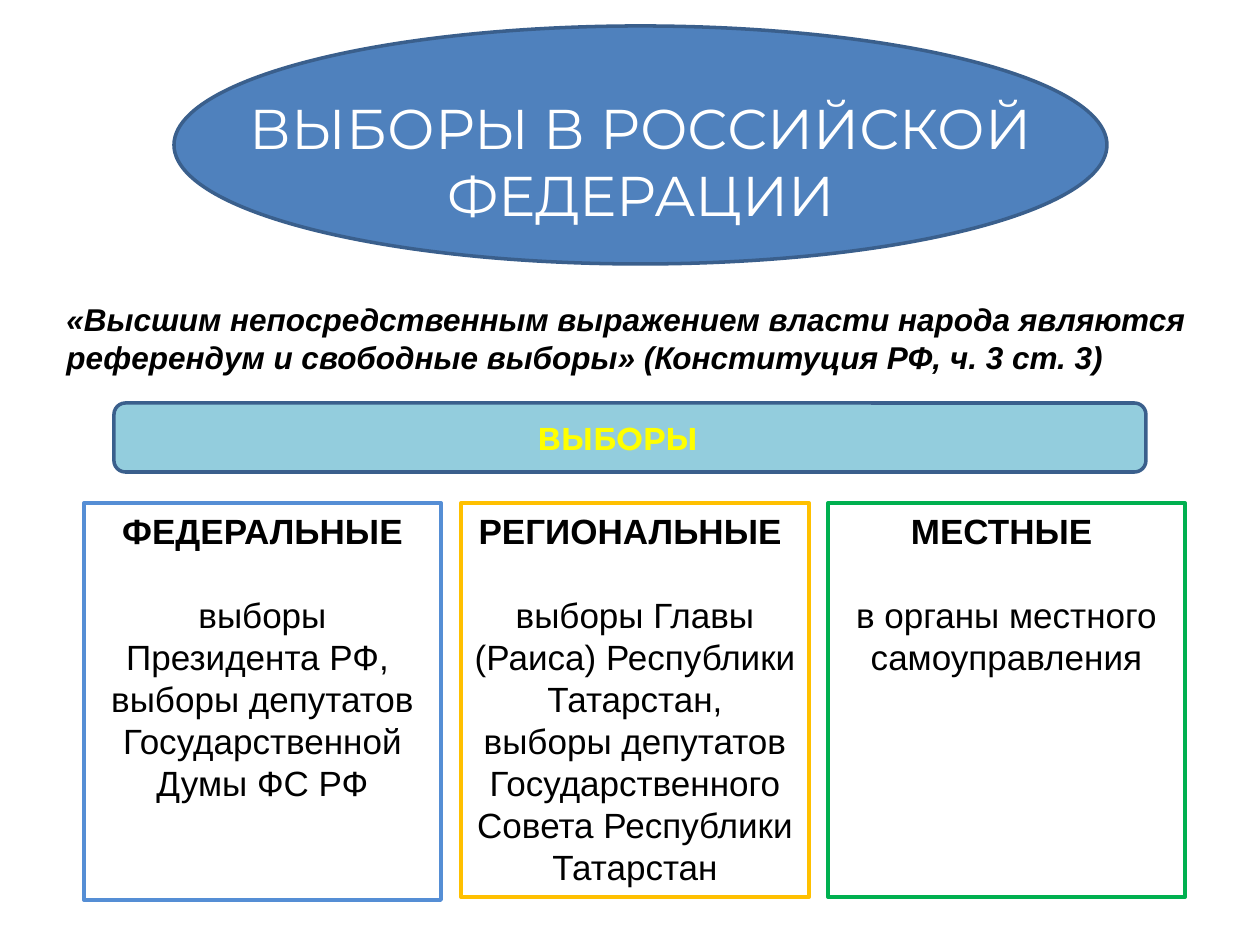
from lxml.etree import SubElement
from pptx import Presentation
from pptx.dml.color import RGBColor
from pptx.enum.shapes import MSO_SHAPE
from pptx.enum.text import MSO_ANCHOR, MSO_AUTO_SIZE, PP_ALIGN
from pptx.oxml.ns import qn
from pptx.util import Emu, Pt

PX = 914400 / 126

BLACK = RGBColor(0x00, 0x00, 0x00)
WHITE = RGBColor(0xFF, 0xFF, 0xFF)
YELLOW = RGBColor(0xFF, 0xFF, 0x00)
BLUE = RGBColor(0x4F, 0x81, 0xBD)
NAVY = RGBColor(0x3A, 0x5F, 0x8C)
AQUA = RGBColor(0x93, 0xCD, 0xDD)
FEDERAL_BLUE = RGBColor(0x55, 0x8E, 0xD5)
REGIONAL_GOLD = RGBColor(0xFF, 0xC0, 0x00)
LOCAL_GREEN = RGBColor(0x00, 0xB0, 0x50)


def px(*lengths):
    return [Emu(round(length * PX)) for length in lengths]


class ElectionSlide:
    """Holds the text style and the slide being built."""

    base_font = {"name": "Arial", "size": Pt(20), "bold": False, "italic": False}
    heading_gap = Pt(24)

    def __init__(self, slide):
        self.slide = slide

    def place(self, placeholder, box):
        """Move a placeholder to its box, in front of what is drawn so far."""
        sides = ("left", "top", "width", "height")
        for side, length in zip(sides, px(*box)):
            setattr(placeholder, side, length)
        placeholder.element.getparent().append(placeholder.element)
        return placeholder

    def panel(self, kind, box, outline, fill=None, weight=2.0):
        panel = self.slide.shapes.add_shape(kind, *px(*box))
        panel.shadow.inherit = False
        self.paint(panel, outline, fill, weight)
        return panel

    def paint(self, shape, outline, fill, weight):
        if fill is None:
            shape.fill.background()
        else:
            shape.fill.solid()
            shape.fill.fore_color.rgb = fill
        shape.line.color.rgb = outline
        shape.line.width = Pt(weight)

    def set_text(self, paragraph, text, align=PP_ALIGN.CENTER, color=BLACK, **style):
        paragraph.text = text
        paragraph.alignment = align
        paragraph.space_before = Pt(0)
        for run in paragraph.runs:
            for key, value in {**self.base_font, **style}.items():
                setattr(run.font, key, value)
            run.font.color.rgb = color

    def title(self, box, text, **style):
        title = self.place(self.slide.shapes.title, box)
        title.text_frame.vertical_anchor = MSO_ANCHOR.MIDDLE
        title.text_frame.auto_size = MSO_AUTO_SIZE.NONE
        self.set_text(title.text_frame.paragraphs[0], text, **style)

    def label(self, box, text, **style):
        frame = self.slide.shapes.add_textbox(*px(*box)).text_frame
        frame.word_wrap = True
        self.set_text(frame.paragraphs[0], text, align=PP_ALIGN.LEFT, **style)

    def card(self, shape, outline, heading, *details):
        """Outlined column: bold heading, a gap, then plain paragraphs."""
        self.paint(shape, outline, None, 2.25)
        frame = shape.text_frame
        frame.word_wrap = True
        frame.auto_size = MSO_AUTO_SIZE.NONE
        frame.vertical_anchor = MSO_ANCHOR.TOP
        for index, text in enumerate((heading, *details)):
            paragraph = frame.add_paragraph() if index else frame.paragraphs[0]
            self.set_text(paragraph, text, bold=index == 0)
            paragraph.space_after = Pt(0) if index else self.heading_gap
            properties = paragraph._p.get_or_add_pPr()
            for key in ("marL", "indent"):
                properties.set(key, "0")
            SubElement(properties, qn("a:buNone"))


def main():
    deck = Presentation()
    deck.slide_width, deck.slide_height = px(1260, 945)
    page = ElectionSlide(deck.slides.add_slide(deck.slide_layouts[1]))
    body = page.slide.placeholders[1]

    # Title on the ellipse
    page.panel(MSO_SHAPE.ROUNDED_RECTANGLE, (114, 403, 1032, 69), NAVY, AQUA)
    page.panel(MSO_SHAPE.OVAL, (174, 26, 933, 238), NAVY, BLUE)
    page.title((74, 82, 1134, 157), "ВЫБОРЫ В РОССИЙСКОЙ ФЕДЕРАЦИИ",
               name="Montserrat", size=Pt(32), color=WHITE)

    # Quotation and banner caption
    page.label((54, 294, 1171, 89),
               "«Высшим непосредственным выражением власти народа являются "
               "референдум и свободные выборы» (Конституция РФ, ч. 3 ст. 3)",
               size=Pt(18), bold=True, italic=True)
    page.label((525, 413, 208, 50), "ВЫБОРЫ",
               name="Montserrat", size=Pt(18), bold=True, color=YELLOW)

    # Three levels of elections
    page.card(page.place(body, (84, 503, 357, 397)), FEDERAL_BLUE,
              "ФЕДЕРАЛЬНЫЕ",
              "выборы\vПрезидента РФ, ",
              "выборы депутатов Государственной Думы ФС РФ")
    other_levels = [
        (461, 348, REGIONAL_GOLD, "РЕГИОНАЛЬНЫЕ ",
         "выборы Главы (Раиса) Республики Татарстан,\v"
         "выборы депутатов Государственного Совета Республики Татарстан"),
        (828, 357, LOCAL_GREEN, "МЕСТНЫЕ ", "в органы местного самоуправления"),
    ]
    for left, width, outline, heading, detail in other_levels:
        column = page.panel(MSO_SHAPE.RECTANGLE, (left, 503, width, 394), outline)
        page.card(column, outline, heading, detail)

    deck.save("out.pptx")


if __name__ == "__main__":
    main()
